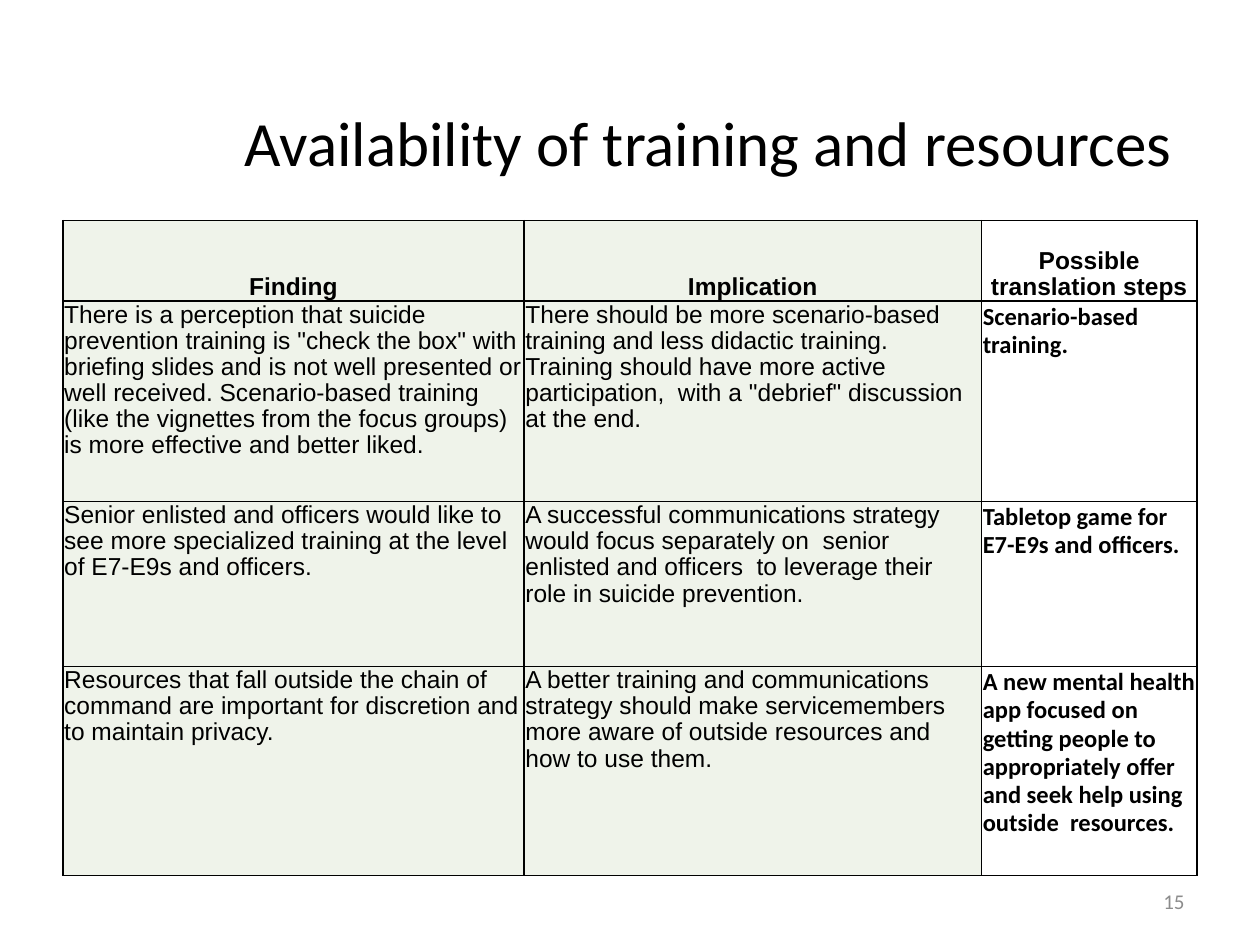
from dataclasses import dataclass

from lxml import etree
from pptx import Presentation
from pptx import util as u
from pptx.dml.color import RGBColor
from pptx.enum import text
from pptx.oxml import ns

HEADINGS = ["Finding", "Implication", "Possible translation steps"]
FINDINGS = [
    [
        "There is a perception that suicide prevention training is \"check the box\" with "
        "briefing slides and is not well presented or well received. Scenario-based training "
        "(like the vignettes from the focus groups)  is more effective and better liked.",
        "There should be more scenario-based training and less didactic training.  Training "
        "should have more active participation,  with a \"debrief\" discussion at the end.",
        "Scenario-based training.",
    ],
    [
        "Senior enlisted and officers would like to see more specialized training at the "
        "level of E7-E9s and officers.",
        "A successful communications strategy would focus separately on  senior enlisted and "
        "officers  to leverage their role in suicide prevention.",
        "Tabletop game for E7-E9s and officers.",
    ],
    [
        "Resources that fall outside the chain of command are important for discretion and "
        "to maintain privacy.",
        "A better training and communications strategy should make servicemembers more aware "
        "of outside resources and how to use them.",
        "A new mental health app focused on getting people to appropriately offer and seek "
        "help using outside  resources.",
    ],
]
COLUMN_WIDTHS = [3.66, 3.63, 1.71]
ROW_HEIGHTS = [0.64, 1.59, 1.31, 1.66]


def color(value):
    return RGBColor.from_string(value)


@dataclass
class Deck:
    """Holds the style and the current slide."""

    slide: object
    ink: str = "000000"
    muted: str = "8C8C8C"
    tint: str = "EFF3EA"
    heading_font: str = "Calibri"
    body_font: str = "Arial"

    def set_words(self, frame, words, size, font, ink, align, anchor, bold=False):
        frame.text = words
        frame.word_wrap = True
        frame.vertical_anchor = anchor
        paragraph = frame.paragraphs[0]
        paragraph.alignment = align
        for run in paragraph.runs:
            run.font.size = u.Pt(size)
            run.font.name = font
            run.font.bold = bold
            run.font.color.rgb = color(ink)
        return paragraph

    def label(self, words, left, top, width, height, size, ink, align):
        box = self.slide.shapes.add_textbox(*map(u.Inches, (left, top, width, height)))
        self.set_words(box.text_frame, words, size, self.heading_font, ink, align,
                       text.MSO_ANCHOR.MIDDLE)

    def borders(self, cell):
        properties = cell._tc.get_or_add_tcPr()
        for side in ("lnL", "lnR", "lnT", "lnB"):
            line = etree.SubElement(properties, ns.qn(f"a:{side}"), w=str(u.Pt(1)))
            fill = etree.SubElement(line, ns.qn("a:solidFill"))
            etree.SubElement(fill, ns.qn("a:srgbClr"), val=self.ink)

    def cell(self, cell, words, is_heading, is_step):
        font = self.heading_font if is_step and not is_heading else self.body_font
        align = text.PP_ALIGN.CENTER if is_heading else text.PP_ALIGN.LEFT
        anchor = text.MSO_ANCHOR.BOTTOM if is_heading else text.MSO_ANCHOR.TOP
        paragraph = self.set_words(cell.text_frame, words, 14, font, self.ink, align, anchor,
                                   is_heading or is_step)
        paragraph.line_spacing = 0.95
        cell.vertical_anchor = anchor
        cell.margin_left = cell.margin_right = cell.margin_top = u.Inches(0.01)
        cell.margin_bottom = 0
        self.borders(cell)
        if is_step:
            cell.fill.background()
        else:
            cell.fill.solid()
            cell.fill.fore_color.rgb = color(self.tint)

    def table(self, rows, left, top, widths, heights):
        frame = self.slide.shapes.add_table(
            len(rows), len(widths),
            *map(u.Inches, (left, top, sum(widths), sum(heights))))
        table = frame.table
        table.first_row = table.horz_banding = False
        for column, width in zip(table.columns, widths):
            column.width = u.Inches(width)
        for row, height in zip(table.rows, heights):
            row.height = u.Inches(height)
        for r, row in enumerate(rows):
            for c, words in enumerate(row):
                self.cell(table.cell(r, c), words, r == 0, c == len(widths) - 1)


def main():
    presentation = Presentation()
    presentation.slide_width = u.Inches(10)
    presentation.slide_height = u.Inches(7.5)
    deck = Deck(presentation.slides.add_slide(presentation.slide_layouts[6]))
    deck.label("Availability of training and resources", 1.12, 0.5, 9, 1.25, 36,
               deck.ink, text.PP_ALIGN.CENTER)
    deck.label("15", 7.17, 6.95, 2.33, 0.4, 12, deck.muted, text.PP_ALIGN.RIGHT)
    deck.table([HEADINGS, *FINDINGS], 0.5, 1.75, COLUMN_WIDTHS, ROW_HEIGHTS)
    presentation.save("out.pptx")


if __name__ == "__main__":
    main()
